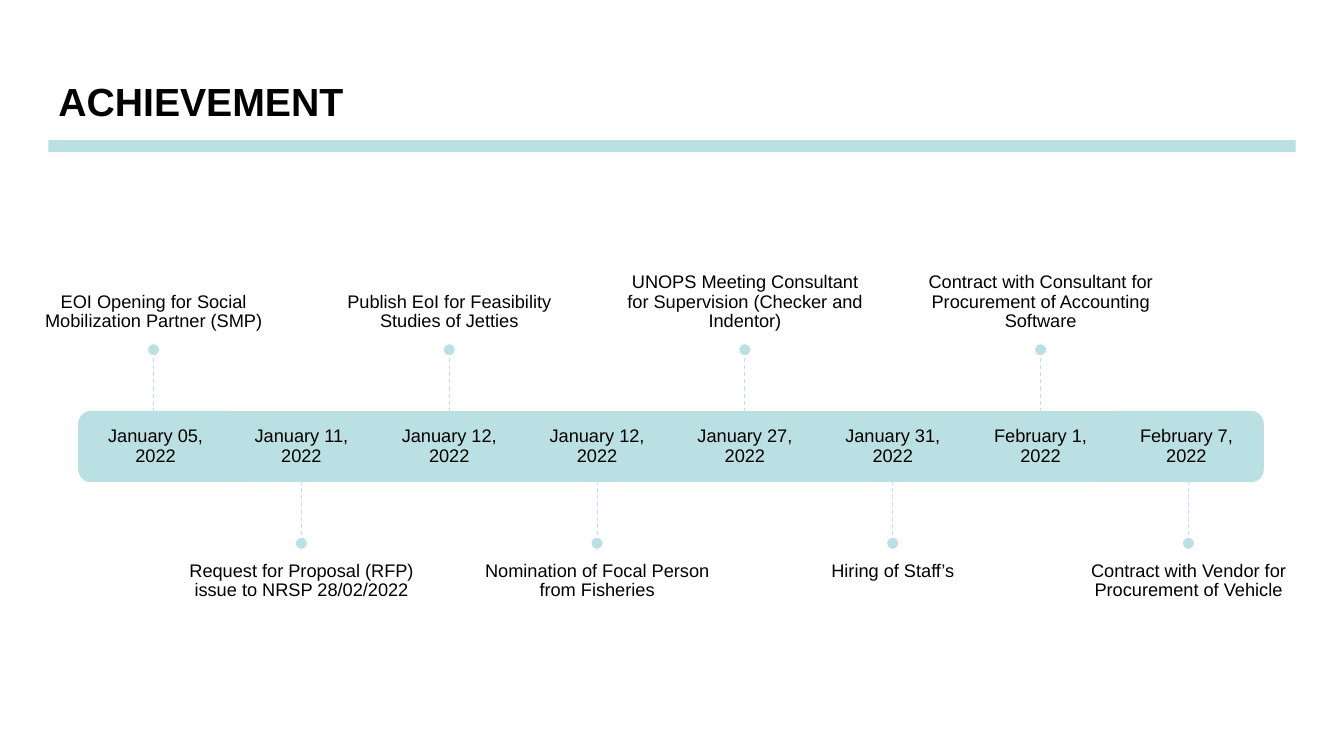
import pptx
import pptx.util
import pptx.dml.color
import pptx.enum.dml
import pptx.enum.shapes
import pptx.enum.text
import pptx.oxml
from pptx.util import Inches

COLORS = {"band": "BBE0E3", "text": "000000", "dot_edge": "FFFFFF"}
SHAPES = pptx.enum.shapes.MSO_SHAPE
ANCHOR = pptx.enum.text.MSO_ANCHOR

MILESTONES = [
    ("January 05, 2022", "EOI Opening for Social Mobilization Partner (SMP)"),
    ("January 11, 2022", "Request for Proposal (RFP) issue to NRSP 28/02/2022"),
    ("January 12, 2022", "Publish EoI for Feasibility Studies of Jetties"),
    ("January 12, 2022", "Nomination of Focal Person from Fisheries"),
    ("January 27, 2022", "UNOPS Meeting Consultant for Supervision (Checker and Indentor)"),
    ("January 31, 2022", "Hiring of Staff’s"),
    ("February 1, 2022", "Contract with Consultant for Procurement of Accounting Software"),
    ("February 7, 2022", "Contract with Vendor for Procurement of Vehicle"),
]

BAND_LEFT, BAND_TOP, BAND_WIDTH, BAND_HEIGHT = 0.79, 4.09, 11.73, 0.68
PITCH = BAND_WIDTH / len(MILESTONES)
STEM, DOT = 0.55, 0.14
NOTE_WIDTH, NOTE_HEIGHT = 2.44, 2.39


def rgb(name):
    return pptx.dml.color.RGBColor.from_string(COLORS[name])


def add_block(slide, kind, left, top, width, height, edge=None):
    block = slide.shapes.add_shape(
        kind, Inches(left), Inches(top), Inches(width), Inches(height))
    block.shadow.inherit = False
    block.fill.solid()
    block.fill.fore_color.rgb = rgb("band")
    if edge:
        block.line.color.rgb = rgb(edge)
        block.line.width = pptx.util.Pt(2)
    else:
        block.line.fill.background()
    return block


def add_text_box(slide, left, top, width, height):
    return slide.shapes.add_textbox(
        Inches(left), Inches(top), Inches(width), Inches(height))


def write_label(holder, text, anchor, side=0, above=0, below=0):
    frame = holder.text_frame
    frame.text = text
    frame.word_wrap = True
    frame.vertical_anchor = anchor
    frame.margin_left = frame.margin_right = Inches(side)
    frame.margin_top, frame.margin_bottom = Inches(above), Inches(below)
    paragraph = frame.paragraphs[0]
    paragraph.alignment = pptx.enum.text.PP_ALIGN.CENTER
    paragraph.line_spacing = 0.9
    set_font(paragraph, 13)


def set_font(paragraph, size, bold=False):
    font = paragraph.runs[0].font
    font.name = "Arial"
    font.size = pptx.util.Pt(size)
    font.bold = bold
    font.color.rgb = rgb("text")


def add_date(slide, index, center, date):
    middle = BAND_TOP + BAND_HEIGHT / 2
    if 0 < index < len(MILESTONES) - 1:
        cell = add_block(slide, SHAPES.RECTANGLE, center - PITCH / 2, BAND_TOP,
                         PITCH, BAND_HEIGHT, "band")
        label = cell
    else:
        cell = add_block(slide, SHAPES.ROUND_2_SAME_RECTANGLE,
                         center - BAND_HEIGHT / 2, middle - PITCH / 2,
                         BAND_HEIGHT, PITCH, "band")
        cell.rotation = 270 if index == 0 else 90
        inward = 0.02 if index == 0 else -0.02
        label = add_text_box(slide, center + inward - 1.43 / 2, middle - 0.31, 1.43, 0.62)
    write_label(label, date, ANCHOR.MIDDLE, 0.11, 0.11, 0.11)
    return cell


def add_stem(slide, center, start, end, cell, site):
    stem = slide.shapes.add_connector(
        pptx.enum.shapes.MSO_CONNECTOR.STRAIGHT,
        Inches(center), Inches(start), Inches(center), Inches(end))
    stem.line.color.rgb = rgb("band")
    stem.line.width = pptx.util.Pt(0.75)
    stem.line.dash_style = pptx.enum.dml.MSO_LINE.DASH
    effects = pptx.oxml.parse_xml(
        '<a:effectLst xmlns:a="http://schemas.openxmlformats.org/drawingml/2006/main"/>')
    stem._element.spPr.append(effects)
    if cell.rotation == 0:
        stem.begin_connect(cell, site)


def add_milestone(slide, index, date, event):
    center = BAND_LEFT + PITCH * (index + 0.5)
    cell = add_date(slide, index, center, date)
    note_left = center - NOTE_WIDTH / 2
    if index % 2 == 0:
        start, end, site = BAND_TOP, BAND_TOP - STEM, 0
        dot_top = end - DOT
        note = add_text_box(slide, note_left, dot_top - NOTE_HEIGHT, NOTE_WIDTH, NOTE_HEIGHT)
        write_label(note, event, ANCHOR.BOTTOM, below=0.11)
    else:
        start, site = BAND_TOP + BAND_HEIGHT, 2
        end = dot_top = start + STEM
        note = add_text_box(slide, note_left, dot_top + DOT, NOTE_WIDTH, NOTE_HEIGHT)
        write_label(note, event, ANCHOR.TOP, above=0.11)
    add_stem(slide, center, start, end, cell, site)
    add_block(slide, SHAPES.OVAL, center - DOT / 2, dot_top, DOT, DOT, "dot_edge")


def add_heading(slide, text):
    heading = add_text_box(slide, 0.48, 0.72, 7.49, 0.57)
    heading.text_frame.text = text
    heading.text_frame.word_wrap = True
    heading.text_frame.auto_size = pptx.enum.text.MSO_AUTO_SIZE.SHAPE_TO_FIT_TEXT
    set_font(heading.text_frame.paragraphs[0], 28, bold=True)
    add_block(slide, SHAPES.RECTANGLE, 0.48, 1.39, 12.37, 0.12)


def main():
    deck = pptx.Presentation()
    deck.slide_width, deck.slide_height = Inches(13.33), Inches(7.5)
    slide = deck.slides.add_slide(deck.slide_layouts[6])
    for index, (date, event) in enumerate(MILESTONES):
        add_milestone(slide, index, date, event)
    add_heading(slide, "ACHIEVEMENT")
    deck.save("out.pptx")


if __name__ == "__main__":
    main()
